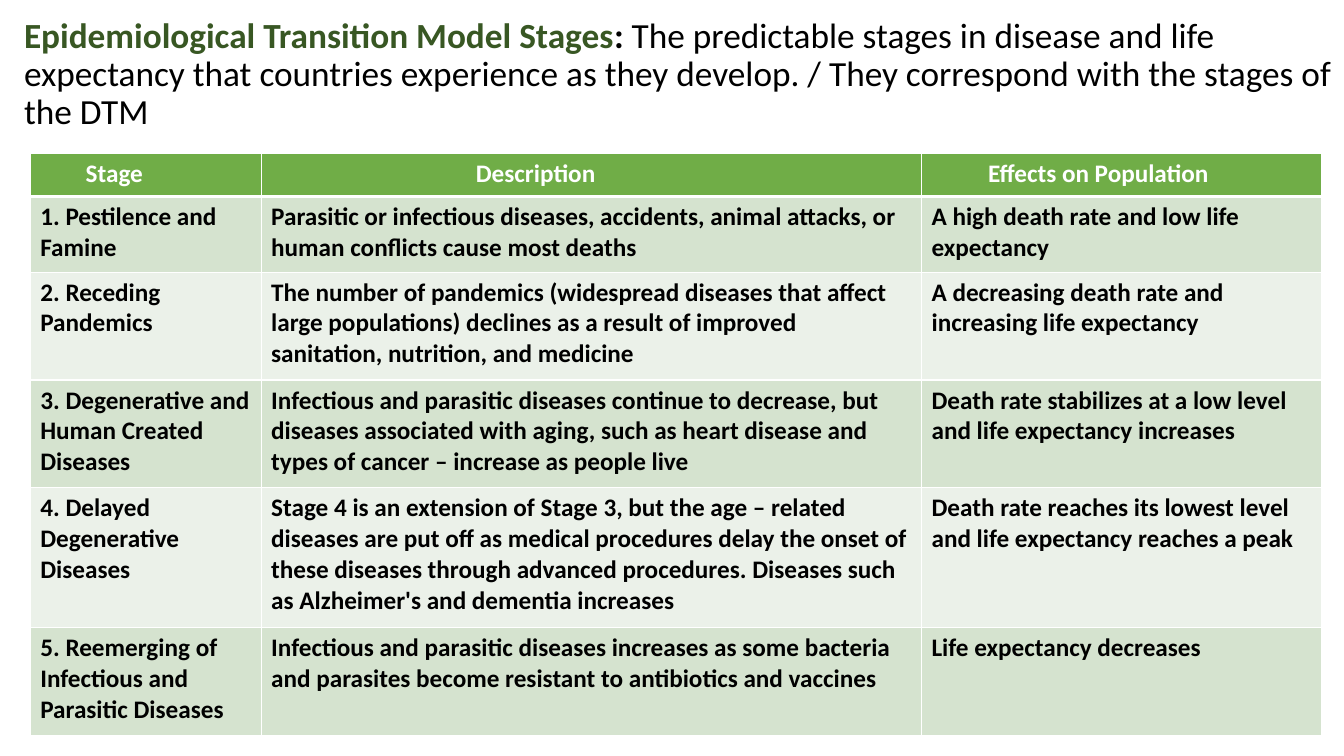
from typing import NamedTuple

from lxml import etree
from pptx import Presentation
from pptx.dml.color import RGBColor
from pptx.enum import text
from pptx.oxml import ns
from pptx.util import Inches, Pt

WHITE = RGBColor(0xFF, 0xFF, 0xFF)
BLACK = RGBColor(0x00, 0x00, 0x00)
FOREST = RGBColor(0x38, 0x57, 0x23)
GREEN = RGBColor(0x70, 0xAD, 0x47)
BANDS = (RGBColor(0xD5, 0xE3, 0xCF), RGBColor(0xEB, 0xF1, 0xE9))
FONT = "Calibri"


class Column(NamedTuple):
    head: str
    width: float
    inset: float


class Stage(NamedTuple):
    height: float
    name: str
    about: str
    effect: str


class Run(NamedTuple):
    words: str
    color: RGBColor
    bold: bool


HEAD_HEIGHT = 0.43
COLUMNS = (
    Column("Stage", 2.29, 0.55),
    Column("Description", 6.55, 2.13),
    Column("Effects on Population", 3.97, 0.66),
)
STAGES = (
    Stage(0.75, "1. Pestilence and Famine",
          "Parasitic or infectious diseases, accidents, animal attacks, or "
          "human conflicts cause most deaths",
          "A high death rate and low life expectancy"),
    Stage(1.07, "2. Receding Pandemics",
          "The number of pandemics (widespread diseases that affect large "
          "populations) declines as a result of improved sanitation, "
          "nutrition, and medicine",
          "A decreasing death rate and increasing life expectancy"),
    Stage(1.07, "3. Degenerative and Human Created Diseases",
          "Infectious and parasitic diseases continue to decrease, but "
          "diseases associated with aging, such as heart disease and types "
          "of cancer – increase as people live",
          "Death rate stabilizes at a low level and life expectancy increases"),
    Stage(1.39, "4. Delayed Degenerative Diseases",
          "Stage 4 is an extension of Stage 3, but the age – related diseases "
          "are put off as medical procedures delay the onset of these "
          "diseases through advanced procedures. Diseases such as "
          "Alzheimer's and dementia increases",
          "Death rate reaches its lowest level and life expectancy reaches a peak"),
    Stage(1.07, "5. Reemerging of Infectious and Parasitic Diseases",
          "Infectious and parasitic diseases increases as some bacteria and "
          "parasites become resistant to antibiotics and vaccines",
          "Life expectancy decreases"),
)
TITLE = (
    Run("Epidemiological Transition Model Stages", FOREST, True),
    Run(": ", BLACK, True),
    Run("The predictable stages in disease and life expectancy that countries "
        "experience as they develop. / They correspond with the stages of the "
        "DTM", BLACK, False),
)


def add_title(slide) -> None:
    box = slide.shapes.add_textbox(
        Inches(0.14), Inches(0.2), Inches(13.19), Inches(1.09))
    frame = box.text_frame
    frame.word_wrap = True
    frame.vertical_anchor = text.MSO_ANCHOR.MIDDLE
    para = frame.paragraphs[0]
    para.line_spacing = 0.9
    para.font.name = FONT
    para.font.size = Pt(25.2)
    for part in TITLE:
        run = para.add_run()
        run.text = part.words
        run.font.bold = part.bold
        run.font.color.rgb = part.color


def add_edges(cell, top: float, bottom: float) -> None:
    """Draw white cell borders; widths are in points."""
    props = cell._tc.get_or_add_tcPr()
    for side, width in (("L", 1), ("R", 1), ("T", top), ("B", bottom)):
        line = etree.SubElement(props, ns.qn(f"a:ln{side}"), w=str(Pt(width)))
        fill = etree.SubElement(line, ns.qn("a:solidFill"))
        etree.SubElement(fill, ns.qn("a:srgbClr"), val=str(WHITE))


def fill_cell(cell, words: str, fill: RGBColor, color: RGBColor) -> None:
    cell.fill.solid()
    cell.fill.fore_color.rgb = fill
    cell.text = words
    font = cell.text_frame.paragraphs[0].font
    font.name = FONT
    font.size = Pt(18)
    font.bold = True
    font.color.rgb = color


def add_stages(slide) -> None:
    heights = [HEAD_HEIGHT] + [stage.height for stage in STAGES]
    widths = [column.width for column in COLUMNS]
    table = slide.shapes.add_table(
        len(heights), len(widths), Inches(0.3), Inches(1.52),
        Inches(sum(widths)), Inches(sum(heights))).table
    for row, height in zip(table.rows, heights):
        row.height = Inches(height)
    for col, column in enumerate(COLUMNS):
        table.columns[col].width = Inches(column.width)
        cell = table.cell(0, col)
        add_edges(cell, 1, 3)
        fill_cell(cell, column.head, GREEN, WHITE)
        cell.margin_left = Inches(column.inset)
    for row, stage in enumerate(STAGES):
        for col, words in enumerate((stage.name, stage.about, stage.effect)):
            cell = table.cell(row + 1, col)
            add_edges(cell, 1 if row else 3, 1)
            fill_cell(cell, words, BANDS[row % 2], BLACK)


def main() -> None:
    deck = Presentation()
    deck.slide_width = Inches(13.33)
    deck.slide_height = Inches(7.5)
    slide = deck.slides.add_slide(deck.slide_layouts[6])
    add_title(slide)
    add_stages(slide)
    deck.save("out.pptx")


if __name__ == "__main__":
    main()
